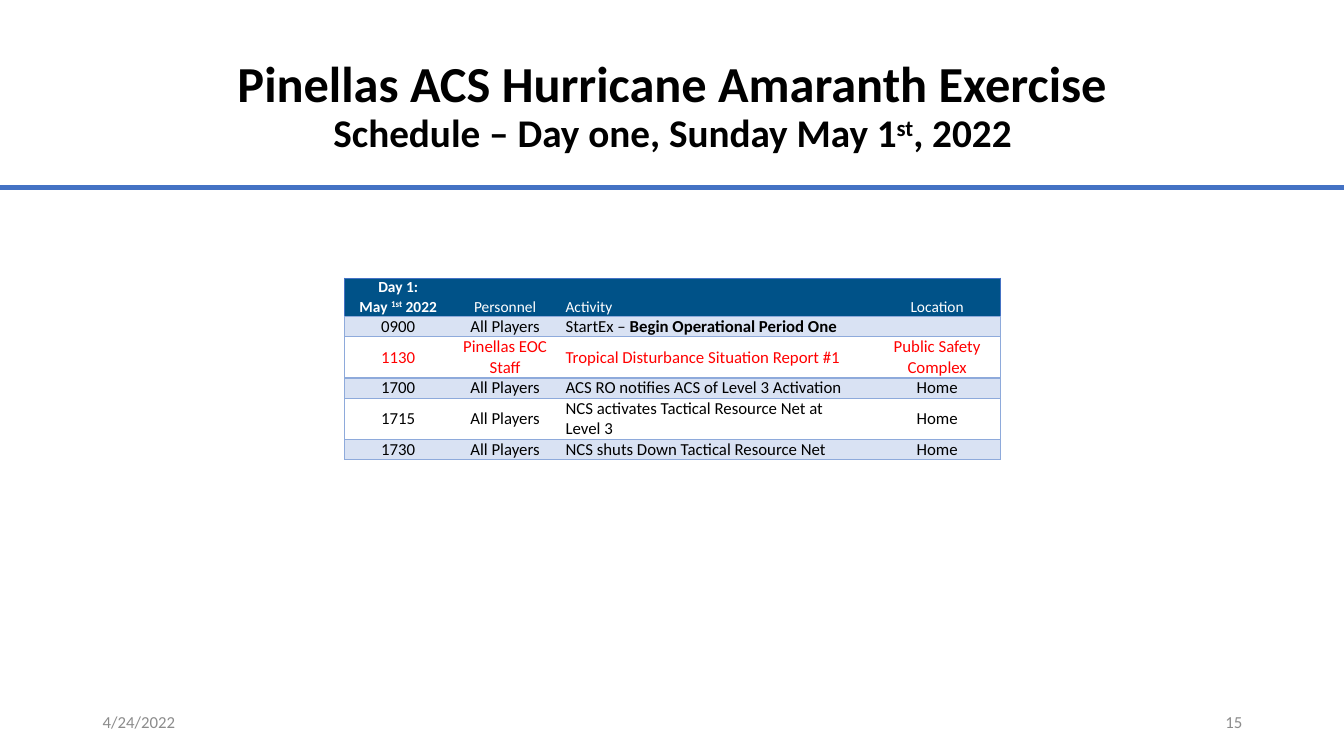
from copy import deepcopy
from dataclasses import dataclass

from lxml.etree import SubElement as Sub
from pptx import Presentation
from pptx.dml.color import RGBColor as Rgb
from pptx.enum.shapes import MSO_CONNECTOR as Conn
from pptx.enum.text import MSO_ANCHOR as Anchor, PP_ALIGN as Align
from pptx.oxml.ns import qn
from pptx.util import Inches, Pt


@dataclass(frozen=True)
class Theme:
    """Hold the colours and type sizes of the deck."""
    font: str = "Calibri"
    ink: str = "000000"
    white: str = "FFFFFF"
    grey: str = "8C8C8C"
    alert: str = "FF0000"
    rule: str = "4472C4"
    head: str = "005288"
    band: str = "D9E2F3"
    edge: str = "8EAADB"
    title: int = 36
    sub: int = 28
    label: int = 11
    body: int = 12
    foot: int = 12


T = Theme()
WIDE = 13.33
COLS = [1.06, 1.06, 3.13, 1.25]
TALL = [0.38, 0.2, 0.41, 0.2, 0.41, 0.2]
HEAD = [
    [("Day 1:\nMay ", {"bold": True}), ("1st", {"bold": True, "sup": True}),
     (" 2022", {"bold": True})],
    "Personnel", "Activity", "Location"]
ROWS = [
    ["0900", "All Players",
     [("StartEx – ", {}), ("Begin Operational Period One", {"bold": True})], ""],
    ["1130", "Pinellas EOC Staff",
     "Tropical Disturbance Situation Report #1", "Public Safety Complex"],
    ["1700", "All Players", "ACS RO notifies ACS of Level 3 Activation", "Home"],
    ["1715", "All Players", "NCS activates Tactical Resource Net at Level\u00a03", "Home"],
    ["1730", "All Players", "NCS shuts Down Tactical Resource Net", "Home"]]


def style(font, size, color, bold):
    """Set the face, size, colour and weight of a font."""
    font.name, font.size, font.bold = T.font, Pt(size), bold
    font.color.rgb = Rgb.from_string(color)


def write(frame, text, size=T.body, color=T.ink, bold=False, align=Align.LEFT,
          anchor=Anchor.MIDDLE, lead=None):
    """Fill a text frame with a string or a list of formatted runs."""
    frame.word_wrap = True
    frame.vertical_anchor = anchor
    para = frame.paragraphs[0]
    para.alignment = align
    if lead:
        para.line_spacing = lead
    if not text:
        Sub(para._p, qn("a:endParaRPr"), sz=str(size * 100))
        return
    for words, look in [(text, {})] if isinstance(text, str) else text:
        for num, part in enumerate(words.split("\n")):
            if num:
                para.add_line_break()
                para._p[-1].append(deepcopy(run._r.rPr))
            if not part:
                continue
            run = para.add_run()
            run.text = part
            style(run.font, look.get("size", size), color, look.get("bold", bold))
            if look.get("sup"):
                run._r.rPr.set("baseline", "30000")


def label(slide, box, text, **look):
    """Place a text box and write its text."""
    shape = slide.shapes.add_textbox(*map(Inches, box))
    write(shape.text_frame, text, **look)


def header(slide, box):
    """Draw the title with the rule beneath it."""
    left, top, width, height = box
    line = slide.shapes.add_connector(
        Conn.STRAIGHT, 0, Inches(top + height + 0.12),
        Inches(WIDE), Inches(top + height + 0.12))
    line.line.color.rgb = Rgb.from_string(T.rule)
    line.line.width = Pt(3)
    Sub(line._element.spPr, qn("a:effectLst"))
    small = {"size": T.sub}
    label(slide, box, [
        ("Pinellas ACS Hurricane Amaranth Exercise\n", {}),
        ("Schedule – Day one, Sunday May 1", small),
        ("st", {**small, "sup": True}), (", 2022", small)],
        size=T.title, bold=True, align=Align.CENTER, lead=0.9)


def border(cell, sides):
    """Set the left, right, top and bottom edges of a cell."""
    props = cell._tc.get_or_add_tcPr()
    for num, (tag, side) in enumerate(zip("LRTB", sides)):
        line = Sub(props, qn(f"a:ln{tag}"))
        props.insert(num, line)
        if side:
            color, width = side
            line.set("w", str(Pt(width)))
            fill = Sub(line, qn("a:solidFill"))
            Sub(fill, qn("a:srgbClr"), val=color)
        else:
            line.set("w", "0")
            Sub(line, qn("a:noFill"))


def paint(cell, row, col):
    """Fill and edge a cell by its place in the grid."""
    fill = T.head if row == 0 else T.band if row % 2 else None
    if fill:
        cell.fill.solid()
        cell.fill.fore_color.rgb = Rgb.from_string(fill)
    else:
        cell.fill.background()
    thin, thick, dark = (T.edge, 1), (T.edge, 1.5), (T.rule, 1)
    side = thin if row else dark
    border(cell, [side if col == 0 else None,
                  side if col == len(COLS) - 1 else None,
                  {0: dark, 1: thick}.get(row, thin),
                  thin if row else thick])


def agenda(slide, box):
    """Build the timetable inside the box."""
    data = [HEAD] + ROWS
    grid = slide.shapes.add_table(len(data), len(COLS), *map(Inches, box)).table
    grid.first_row = grid.horz_banding = False
    for col, width in enumerate(COLS):
        grid.columns[col].width = Inches(width)
    for row, (line, tall) in enumerate(zip(data, TALL)):
        grid.rows[row].height = Inches(tall)
        for col, text in enumerate(line):
            cell = grid.cell(row, col)
            cell.margin_left = cell.margin_right = Inches(0.07)
            cell.margin_top = cell.margin_bottom = 0
            look = {"align": Align.LEFT if col == 2 else Align.CENTER}
            if row == 0:
                look.update(size=T.label, color=T.white)
            elif line[0] == "1130":
                look.update(color=T.alert)
            write(cell.text_frame, text, **look)
            cell.vertical_anchor = (Anchor.MIDDLE if row else
                                    Anchor.BOTTOM if col else Anchor.TOP)
            paint(cell, row, col)


def footer(slide, box):
    """Write the date at the left and the page number at the right."""
    left, top, width, height = box
    look = {"size": T.foot, "color": T.grey}
    label(slide, (left, top, 3, height), "4/24/2022", **look)
    label(slide, (left + width - 3, top, 3, height), "15", align=Align.RIGHT, **look)


def main():
    """Build the slide and save it."""
    deck = Presentation()
    deck.slide_width, deck.slide_height = Inches(WIDE), Inches(7.5)
    slide = deck.slides.add_slide(deck.slide_layouts[6])
    header(slide, (1.76, 0.4, 9.82, 1.34))
    footer(slide, (0.92, 6.96, 11.5, 0.4))
    agenda(slide, (3.42, 2.76, sum(COLS), sum(TALL)))
    deck.save("out.pptx")


if __name__ == "__main__":
    main()
